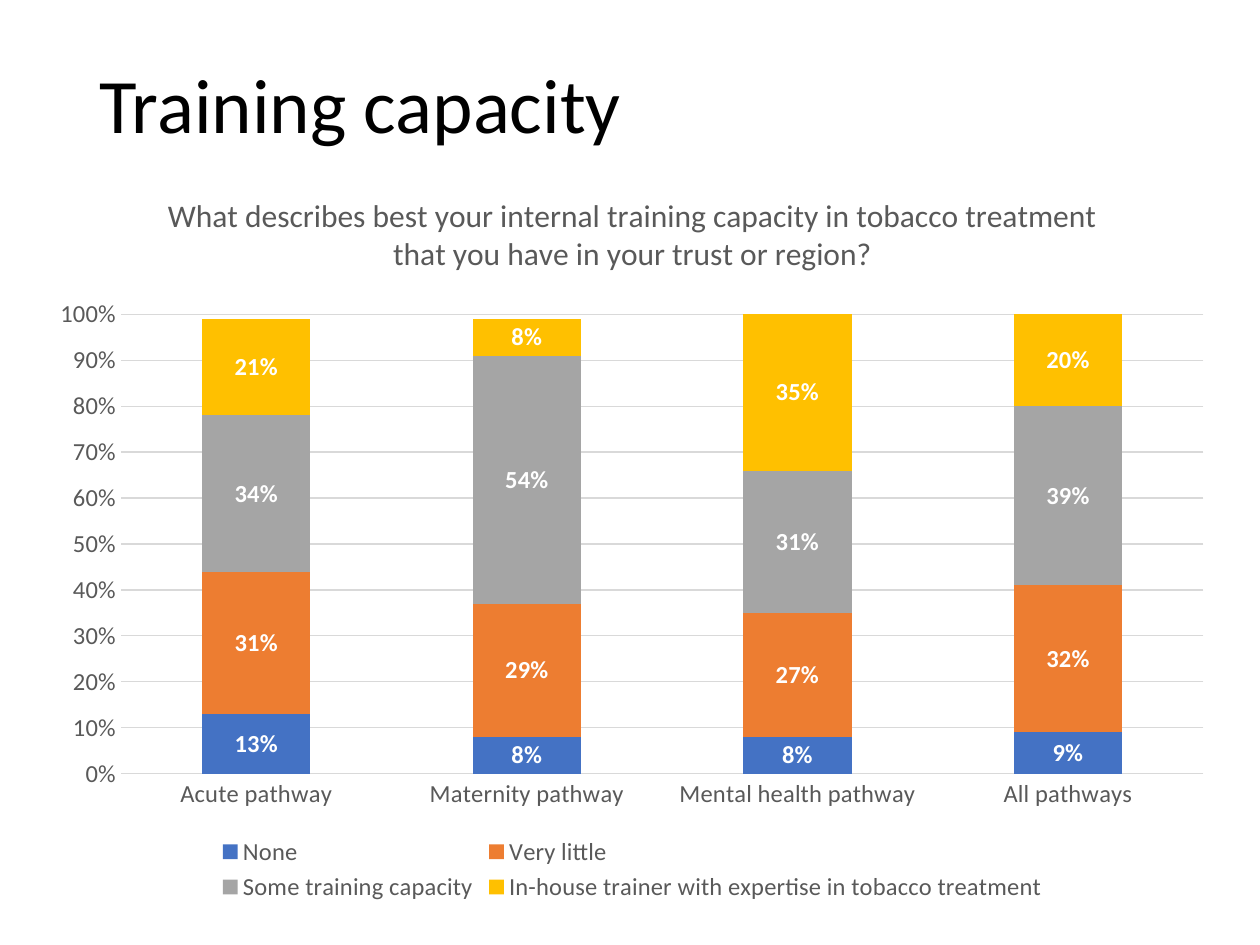
from dataclasses import dataclass

from pptx import Presentation
from pptx.chart.data import CategoryChartData
from pptx.dml.color import RGBColor
from pptx.enum.chart import XL_CHART_TYPE as ChartType
from pptx.enum.chart import XL_LABEL_POSITION as LabelPos
from pptx.enum.chart import XL_LEGEND_POSITION as LegendPos
from pptx.enum.chart import XL_TICK_MARK as Tick
from pptx.enum.text import MSO_ANCHOR, PP_ALIGN
from pptx.oxml import parse_xml
from pptx.oxml.ns import nsdecls, qn
from pptx.util import Pt


@dataclass(frozen=True)
class Theme:
    font: str = "Calibri"
    black: str = "000000"
    white: str = "FFFFFF"
    text: str = "595959"
    grid: str = "D9D9D9"
    title_size: int = 44
    question_size: int = 18
    label_size: int = 14
    line_width: float = 0.75


THEME = Theme()
QUESTION = ("What describes best your internal training capacity in tobacco "
            "treatment that you have in your trust or region?")
PATHWAYS = ["Acute pathway", "Maternity pathway", "Mental health pathway", "All pathways"]
CAPACITY = [
    ("None", "4472C4", (0.13, 0.08, 0.08, 0.09)),
    ("Very little", "ED7D31", (0.31, 0.29, 0.27, 0.32)),
    ("Some training capacity", "A5A5A5", (0.34, 0.54, 0.31, 0.39)),
    ("In-house trainer with expertise in tobacco treatment", "FFC000",
     (0.21, 0.08, 0.35, 0.20)),
]


def rgb(color):
    return RGBColor.from_string(color)


def style_font(font, size, color, bold=False):
    font.name = THEME.font
    font.size = Pt(size)
    font.bold = bold
    font.color.rgb = rgb(color)


def style_line(line):
    line.color.rgb = rgb(THEME.grid)
    line.width = Pt(THEME.line_width)


def add_title(s, text):
    title = s.shapes.title
    title.left, title.top, title.width, title.height = Pt(49.5), Pt(6.5), Pt(621), Pt(111)
    tf = title.text_frame
    tf.text = text
    tf.vertical_anchor = MSO_ANCHOR.MIDDLE
    p = tf.paragraphs[0]
    p.alignment = PP_ALIGN.LEFT
    p.line_spacing = 0.9
    style_font(p.runs[0].font, THEME.title_size, THEME.black)


def place_plot(chart, x, y, w, h):
    """Fix the inner plot area, in fractions of the chart."""
    area = chart._chartSpace.chart.plotArea
    for old in area.findall(qn("c:layout")):
        area.remove(old)
    edges = "".join(f'<c:{tag} val="{val}"/>' for tag, val in
                    (("xMode", "edge"), ("yMode", "edge"),
                     ("x", x), ("y", y), ("w", w), ("h", h)))
    area.insert(0, parse_xml(
        f'<c:layout {nsdecls("c")}><c:manualLayout><c:layoutTarget val="inner"/>'
        f'{edges}</c:manualLayout></c:layout>'))


def style_axes(chart):
    for axis in (chart.category_axis, chart.value_axis):
        axis.major_tick_mark = axis.minor_tick_mark = Tick.NONE
        style_font(axis.tick_labels.font, THEME.label_size, THEME.text)
    style_line(chart.category_axis.format.line)
    values = chart.value_axis
    values.minimum_scale, values.maximum_scale, values.major_unit = 0, 1, 0.1
    values.tick_labels.number_format = "0%"
    values.tick_labels.number_format_is_linked = False
    values.format.line.fill.background()
    values.has_major_gridlines = True
    style_line(values.major_gridlines.format.line)


def style_series(series, color):
    series.format.fill.solid()
    series.format.fill.fore_color.rgb = rgb(color)
    labels = series.data_labels
    labels.show_value = True
    labels.position = LabelPos.CENTER
    labels.number_format = "0%"
    labels.number_format_is_linked = False
    style_font(labels.font, THEME.label_size, THEME.white, bold=True)


def add_capacity_chart(s):
    data = CategoryChartData(number_format="0%")
    data.categories = PATHWAYS
    for name, _, values in CAPACITY:
        data.add_series(name, values)
    chart = s.shapes.add_chart(ChartType.COLUMN_STACKED, Pt(21.6), Pt(95),
                               Pt(679.7), Pt(423.4), data).chart
    style_font(chart.font, 10, THEME.black)

    chart.has_title = True
    tf = chart.chart_title.text_frame
    tf.text = QUESTION
    style_font(tf.paragraphs[0].runs[0].font, THEME.question_size, THEME.text)
    chart.chart_title.include_in_layout = False

    chart.has_legend = True
    chart.legend.position = LegendPos.BOTTOM
    chart.legend.include_in_layout = False
    style_font(chart.legend.font, THEME.label_size, THEME.text)

    style_axes(chart)
    plot = chart.plots[0]
    plot.gap_width, plot.overlap, plot.vary_by_categories = 150, 100, False
    for series, (_, color, _) in zip(plot.series, CAPACITY):
        style_series(series, color)
    place_plot(chart, 0.07, 0.2, 0.91, 0.62)


def main():
    prs = Presentation()
    prs.slide_width, prs.slide_height = Pt(720), Pt(540)
    s = prs.slides.add_slide(prs.slide_layouts[5])
    add_title(s, "Training capacity")
    add_capacity_chart(s)
    prs.save("out.pptx")


if __name__ == "__main__":
    main()
